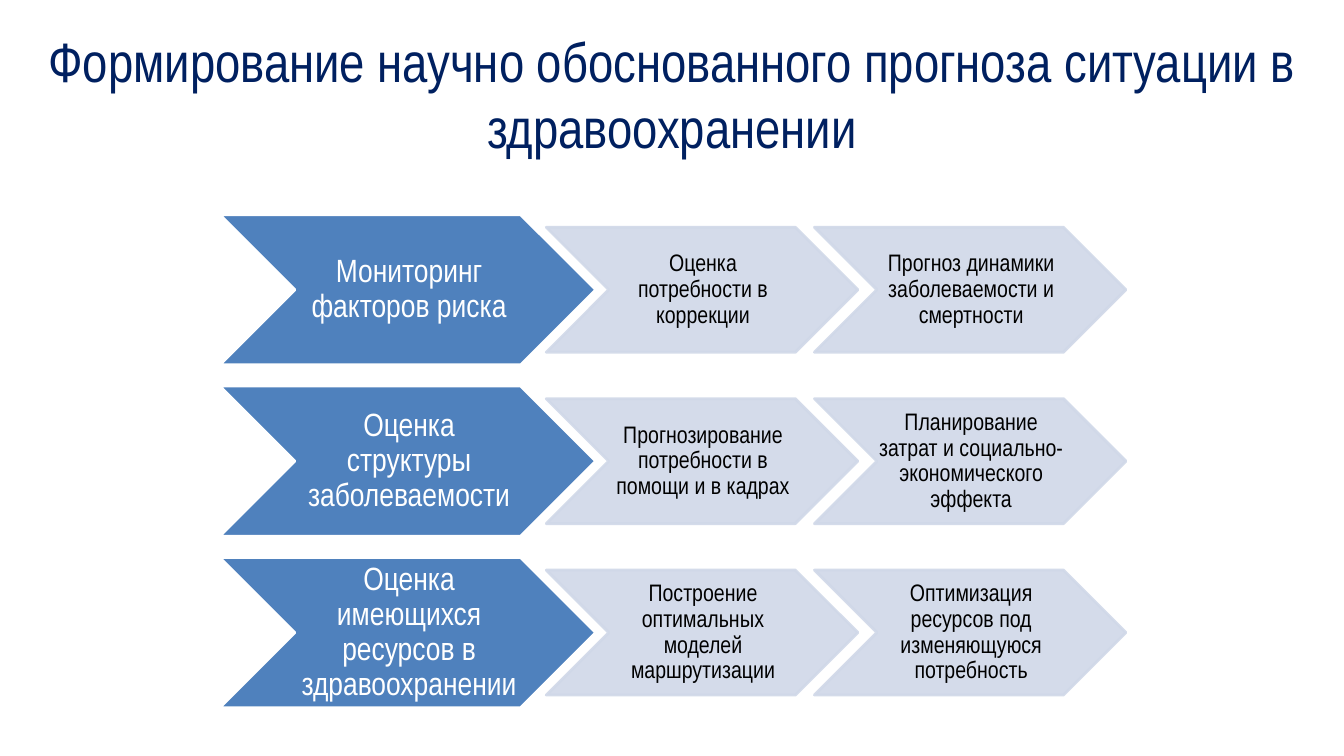
from dataclasses import dataclass

from lxml.etree import SubElement
from pptx import Presentation
from pptx.dml.color import RGBColor
from pptx.enum.shapes import MSO_SHAPE as Preset
from pptx.enum.text import MSO_ANCHOR as Anchor, PP_ALIGN as Align
from pptx.oxml.ns import qn
from pptx.util import Inches, Pt

NAVY = RGBColor(0x00, 0x20, 0x60)
BLUE = RGBColor(0x4F, 0x81, 0xBD)
PALE = RGBColor(0xD0, 0xD8, 0xE8)
WHITE = RGBColor(0xFF, 0xFF, 0xFF)
BLACK = RGBColor(0x00, 0x00, 0x00)
FONT = "Arial Narrow"

PAGE_WIDTH = Inches(13.333)
PAGE_HEIGHT = Inches(7.5)

# Shares of the page, in percent
FIRST_ROW_CENTRE = 38.33
ROW_PITCH = 22.67

TITLE = "Формирование научно обоснованного прогноза ситуации в здравоохранении"


@dataclass(frozen=True)
class Column:
    """Look of one chevron column; lengths are percent of the page."""
    left: float
    width: float
    height: float
    fill: RGBColor
    line: RGBColor
    opacity: int
    text_color: RGBColor
    text_size: float
    inset: float


def pale_column(left: float) -> Column:
    return Column(left, 23.18, 16.53, PALE, PALE, 90, BLACK, 17, 0.02)


COLUMNS = (
    Column(16.35, 27.98, 19.87, BLUE, WHITE, 100, WHITE, 23, 0.03),
    pale_column(40.65),
    pale_column(60.6),
)

ROWS = (
    ("Мониторинг факторов риска",
     "Оценка потребности в коррекции",
     "Прогноз динамики заболеваемости и смертности"),
    ("Оценка структуры заболеваемости",
     "Прогнозирование потребности в помощи и в кадрах",
     "Планирование затрат и социально-экономического эффекта"),
    ("Оценка имеющихся ресурсов в здравоохранении",
     "Построение оптимальных моделей маршрутизации",
     "Оптимизация ресурсов под изменяющуюся потребность"),
)


def across(percent: float) -> int:
    return round(PAGE_WIDTH * percent / 100)


def down(percent: float) -> int:
    return round(PAGE_HEIGHT * percent / 100)


def write_text(box, text: str, *, size: float, color: RGBColor,
               spacing: float = 1.0,
               insets: tuple = (0.1, 0.05, 0.1, 0.05)) -> None:
    frame = box.text_frame
    frame.word_wrap = True
    frame.vertical_anchor = Anchor.MIDDLE
    (frame.margin_left, frame.margin_top,
     frame.margin_right, frame.margin_bottom) = map(Inches, insets)
    para = frame.paragraphs[0]
    para.alignment = Align.CENTER
    para.line_spacing = spacing
    span = para.add_run()
    span.text = text
    span.font.name = FONT
    span.font.size = Pt(size)
    span.font.color.rgb = color


def set_opacity(shape, percent: int) -> None:
    """Apply the opacity to both the fill and the outline."""
    for color in shape._element.spPr.iter(qn("a:srgbClr")):
        SubElement(color, qn("a:alpha"), val=str(percent * 1000))


def draw_chevron(page, column: Column, row: int, text: str) -> None:
    centre = FIRST_ROW_CENTRE + row * ROW_PITCH
    chevron = page.shapes.add_shape(
        Preset.CHEVRON, across(column.left), down(centre - column.height / 2),
        across(column.width), down(column.height))
    chevron.shadow.inherit = False
    chevron.fill.solid()
    chevron.fill.fore_color.rgb = column.fill
    chevron.line.color.rgb = column.line
    chevron.line.width = Pt(2)
    if column.opacity < 100:
        set_opacity(chevron, column.opacity)
    write_text(chevron, text, size=column.text_size, color=column.text_color,
               spacing=0.9, insets=(column.inset, 0.01, 0, 0.01))


def main() -> None:
    deck = Presentation()
    deck.slide_width = PAGE_WIDTH
    deck.slide_height = PAGE_HEIGHT
    page = deck.slides.add_slide(deck.slide_layouts[6])

    title = page.shapes.add_textbox(0, down(4), PAGE_WIDTH, down(16.67))
    write_text(title, TITLE, size=39.6, color=NAVY)

    for row, texts in enumerate(ROWS):
        for column, text in zip(COLUMNS, texts):
            draw_chevron(page, column, row, text)

    deck.save("out.pptx")


if __name__ == "__main__":
    main()
